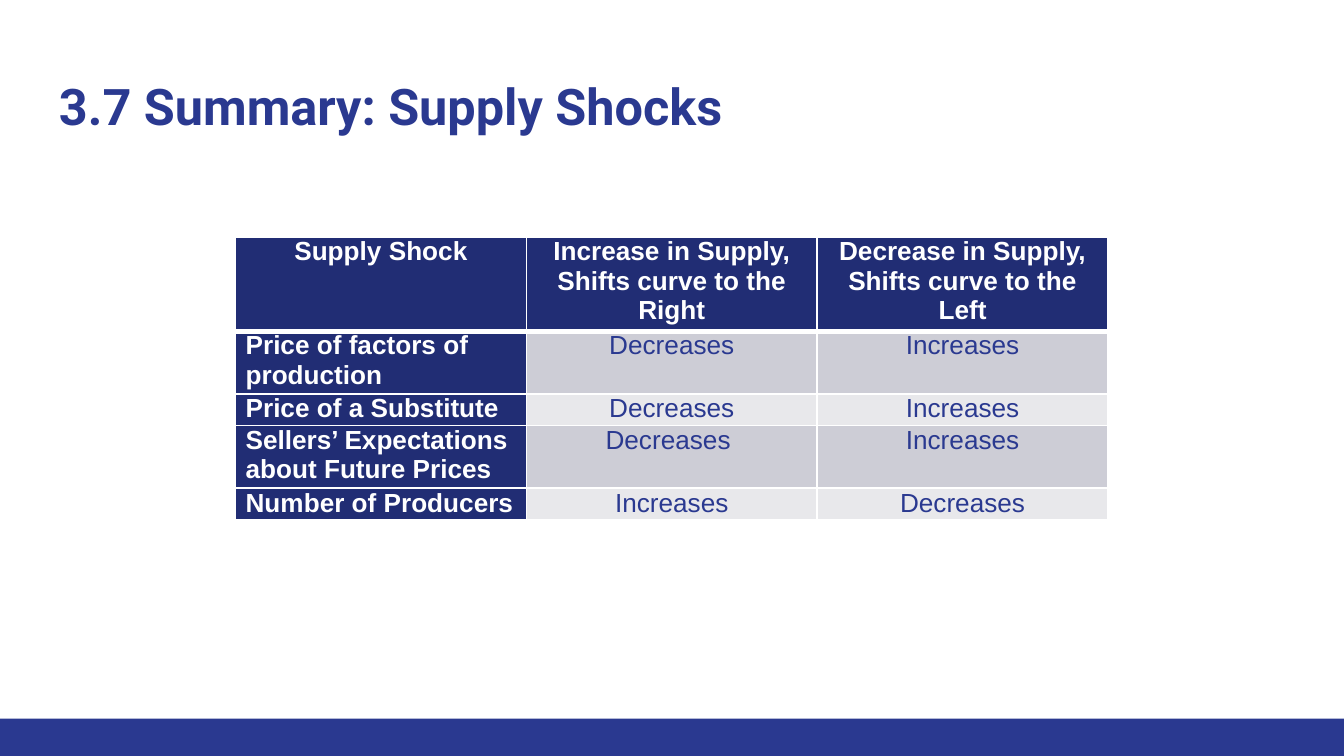
from dataclasses import dataclass

from lxml import etree
from pptx import Presentation
from pptx.dml.color import RGBColor
from pptx.enum import shapes, text
from pptx.oxml import ns
from pptx.util import Pt


@dataclass(frozen=True)
class Theme:
    blue: str = "2A3990"
    navy: str = "212D74"
    white: str = "FFFFFF"
    bands: tuple = ("CDCDD6", "E8E8EB")
    title_font: str = "Roboto"
    body_font: str = "Arial"
    title_size: float = 27
    body_size: float = 14


THEME = Theme()
WIDTH, HEIGHT = 720, 405
COLUMN_WIDTH = 155.8
LINE_HEIGHT = 15.7
ROW_LINES = (3, 2, 1, 2, 1)
ROWS = (
    ("Supply Shock", "Increase in Supply, Shifts curve to the Right",
     "Decrease in Supply, Shifts curve to the Left"),
    ("Price of factors of production", "Decreases", "Increases"),
    ("Price of a Substitute", "Decreases", "Increases"),
    ("Sellers’ Expectations about Future Prices", "Decreases\u00a0", "Increases"),
    ("Number of Producers", "Increases", "Decreases"),
)


def write(tf, content, *, font, size, color, bold=False, align=None, before=0):
    tf.word_wrap = True
    p = tf.paragraphs[0]
    p.alignment = align
    p.space_before = Pt(before)
    r = p.add_run()
    r.text = content
    r.font.name = font
    r.font.size = Pt(size)
    r.font.bold = bold
    r.font.color.rgb = RGBColor.from_string(color)


def paint(fill, color):
    fill.solid()
    fill.fore_color.rgb = RGBColor.from_string(color)


def add_footer_bar(s):
    sp = s.shapes.add_shape(shapes.MSO_SHAPE.RECTANGLE,
                            Pt(0), Pt(385), Pt(WIDTH), Pt(20))
    sp.shadow.inherit = False
    paint(sp.fill, THEME.blue)
    sp.line.fill.background()


def add_title(s, content):
    sp = s.shapes.add_textbox(Pt(24.5), Pt(32.5), Pt(671), Pt(47.5))
    tf = sp.text_frame
    tf.margin_left = tf.margin_right = tf.margin_top = tf.margin_bottom = Pt(7.2)
    tf.vertical_anchor = text.MSO_ANCHOR.MIDDLE
    write(tf, content, font=THEME.title_font, size=THEME.title_size,
          color=THEME.blue, bold=True)


def set_borders(cell, **widths):
    tc_pr = cell._tc.get_or_add_tcPr()
    for i, side in enumerate("LRTB"):
        ln = etree.Element(ns.qn(f"a:ln{side}"), w=str(Pt(widths.get(side, 1))))
        fill = etree.SubElement(ln, ns.qn("a:solidFill"))
        etree.SubElement(fill, ns.qn("a:srgbClr"), val=THEME.white)
        tc_pr.insert(i, ln)


def format_cell(cell, content, row, col):
    is_label = row == 0 or col == 0
    is_centred = row == 0 or col > 0
    cell.margin_left = cell.margin_right = Pt(5.4)
    cell.margin_top = cell.margin_bottom = Pt(0)
    write(cell.text_frame, content, font=THEME.body_font, size=THEME.body_size,
          color=THEME.white if is_label else THEME.blue, bold=is_label,
          align=text.PP_ALIGN.CENTER if is_centred else text.PP_ALIGN.LEFT,
          before=12)
    paint(cell.fill, THEME.navy if is_label else THEME.bands[(row - 1) % 2])
    set_borders(cell, T=3 if row == 1 else 1, B=3 if row == 0 else 1)


def add_summary_table(s, rows):
    cols = len(rows[0])
    frame = s.shapes.add_table(len(rows), cols, Pt(126.2), Pt(127),
                               Pt(COLUMN_WIDTH * cols),
                               Pt(LINE_HEIGHT * sum(ROW_LINES)))
    table = frame.table
    for column in table.columns:
        column.width = Pt(COLUMN_WIDTH)
    for row, lines in zip(table.rows, ROW_LINES):
        row.height = Pt(LINE_HEIGHT * lines)
    for i, row in enumerate(rows):
        for j, content in enumerate(row):
            format_cell(table.cell(i, j), content, i, j)


def main():
    prs = Presentation()
    prs.slide_width, prs.slide_height = Pt(WIDTH), Pt(HEIGHT)
    s = prs.slides.add_slide(prs.slide_layouts[6])
    paint(s.background.fill, THEME.white)
    add_footer_bar(s)
    add_title(s, "3.7 Summary:\u00a0Supply Shocks")
    add_summary_table(s, ROWS)
    prs.save("out.pptx")


if __name__ == "__main__":
    main()
